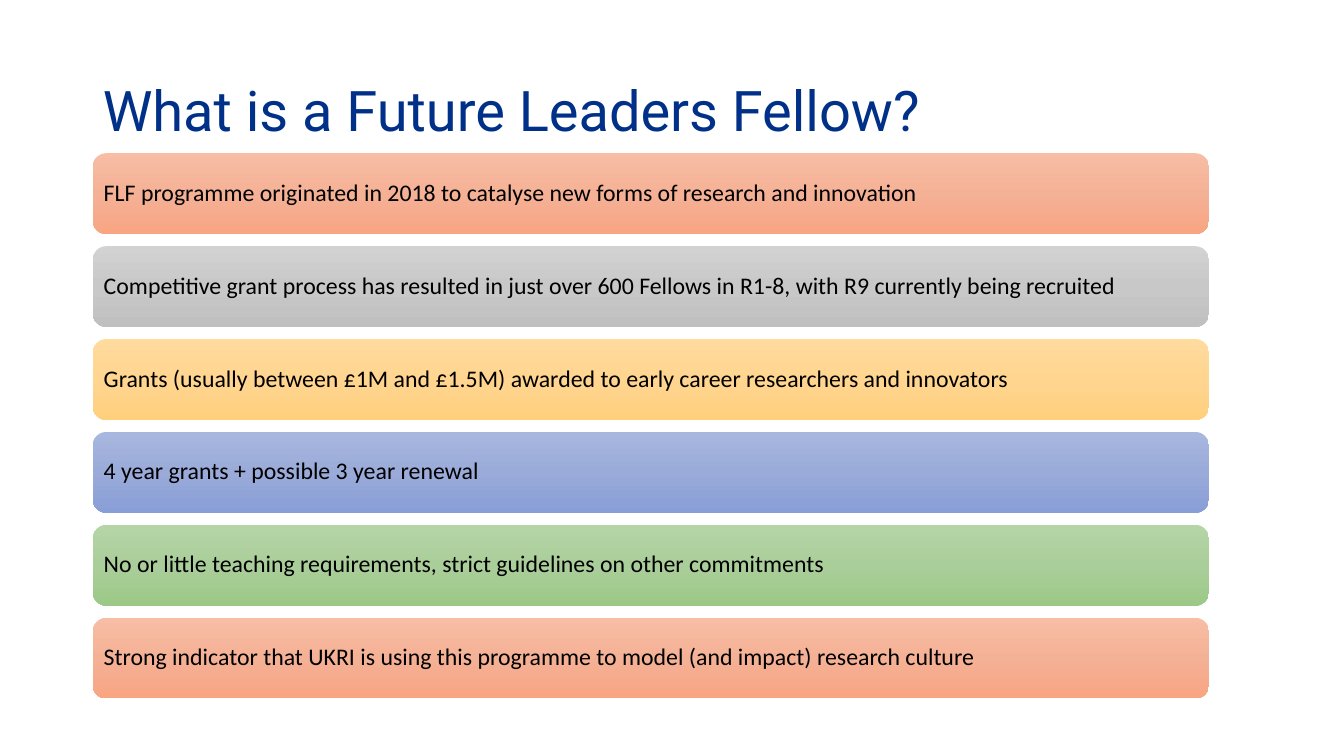
from copy import deepcopy
from dataclasses import dataclass
from typing import Any

from pptx import Presentation
from pptx.dml.color import RGBColor
from pptx.enum.shapes import MSO_SHAPE
from pptx.enum.text import MSO_ANCHOR, MSO_AUTO_SIZE, PP_ALIGN
from pptx.slide import Slide
from pptx.text.text import TextFrame
from pptx.util import Inches, Pt

SLIDE_WIDTH, SLIDE_HEIGHT = Inches(13.33), Inches(7.5)
NAVY = RGBColor(0x00, 0x30, 0x88)
BLACK = RGBColor(0x00, 0x00, 0x00)
ORANGE = (RGBColor(0xF7, 0xBD, 0xA5), RGBColor(0xF5, 0xB1, 0x96), RGBColor(0xF8, 0xA5, 0x82))
GREY = (RGBColor(0xD2, 0xD2, 0xD2), RGBColor(0xC8, 0xC8, 0xC8), RGBColor(0xC0, 0xC0, 0xC0))
GOLD = (RGBColor(0xFF, 0xDB, 0x9E), RGBColor(0xFF, 0xD5, 0x90), RGBColor(0xFF, 0xD0, 0x7C))
BLUE = (RGBColor(0xA8, 0xB7, 0xDF), RGBColor(0x9A, 0xAB, 0xD9), RGBColor(0x88, 0x9E, 0xD7))
GREEN = (RGBColor(0xB5, 0xD5, 0xA7), RGBColor(0xAA, 0xCE, 0x9A), RGBColor(0x9C, 0xC9, 0x87))

LEFT_SHARE, BAR_WIDTH_SHARE, TITLE_WIDTH_SHARE = 6.9, 83.05, 82.07
TITLE_TOP_SHARE, TITLE_HEIGHT_SHARE = 5.33, 19.33
FIRST_BAR_SHARE, BAR_HEIGHT_SHARE, BAR_STEP_SHARE = 20.27, 10.67, 12.29

FRAME_FORMAT = {
    "word_wrap": True,
    "auto_size": MSO_AUTO_SIZE.NONE,
    "vertical_anchor": MSO_ANCHOR.MIDDLE,
}
BAR_FRAME_FORMAT = FRAME_FORMAT | dict.fromkeys(
    ("margin_left", "margin_top", "margin_right", "margin_bottom"), Inches(0.07)
)
PARAGRAPH_FORMAT = {"alignment": PP_ALIGN.LEFT, "line_spacing": 0.9}
TITLE_FONT = {"name": "Roboto", "size": Pt(40)}
BAR_FONT = {"name": "Calibri", "size": Pt(17)}


@dataclass(frozen=True)
class Bar:
    """A statement and the gradient behind it."""

    text: str
    colours: tuple[RGBColor, RGBColor, RGBColor]


BARS = (
    Bar("FLF programme originated in 2018 to catalyse new forms of research and innovation", ORANGE),
    Bar("Competitive grant process has resulted in just over 600 Fellows in R1-8, "
        "with R9 currently being recruited", GREY),
    Bar("Grants (usually between £1M and £1.5M) awarded to early career researchers and innovators", GOLD),
    Bar("4 year grants + possible 3 year renewal", BLUE),
    Bar("No or little teaching requirements, strict guidelines on other commitments", GREEN),
    Bar("Strong indicator that UKRI is using this programme to model (and impact) research culture", ORANGE),
)


def across(percent: float) -> int:
    """Return a share of the slide's width."""
    return round(SLIDE_WIDTH * percent / 100)


def down(percent: float) -> int:
    """Return a share of the slide's height."""
    return round(SLIDE_HEIGHT * percent / 100)


def apply_format(target: Any, values: dict[str, Any]) -> None:
    """Set every listed attribute on the target."""
    for name, value in values.items():
        setattr(target, name, value)


def write_text(frame: TextFrame, text: str, frame_format: dict[str, Any],
               font: dict[str, Any], colour: RGBColor) -> None:
    """Fill a text frame with one formatted paragraph."""
    apply_format(frame, frame_format)
    para = frame.paragraphs[0]
    apply_format(para, PARAGRAPH_FORMAT)
    span = para.add_run()
    span.text = text
    apply_format(span.font, font)
    span.font.color.rgb = colour


def add_title(page: Slide, text: str) -> None:
    """Place and fill the title."""
    title = page.shapes.title
    apply_format(title, {
        "left": across(LEFT_SHARE),
        "top": down(TITLE_TOP_SHARE),
        "width": across(TITLE_WIDTH_SHARE),
        "height": down(TITLE_HEIGHT_SHARE),
    })
    write_text(title.text_frame, text, FRAME_FORMAT, TITLE_FONT, NAVY)


def add_bar(page: Slide, bar: Bar, row: int) -> None:
    """Draw one rounded gradient bar with its statement."""
    box = page.shapes.add_shape(
        MSO_SHAPE.ROUNDED_RECTANGLE,
        across(LEFT_SHARE),
        down(FIRST_BAR_SHARE + row * BAR_STEP_SHARE),
        across(BAR_WIDTH_SHARE),
        down(BAR_HEIGHT_SHARE),
    )
    box.shadow.inherit = False
    box.line.fill.background()
    box.fill.gradient()
    box.fill.gradient_angle = 270
    stop_list = box.element.xpath(".//a:gsLst")[0]
    stop_list.insert(1, deepcopy(stop_list[0]))
    for index, (stop, colour) in enumerate(zip(box.fill.gradient_stops, bar.colours)):
        stop.position = index / 2
        stop.color.rgb = colour
    write_text(box.text_frame, bar.text, BAR_FRAME_FORMAT, BAR_FONT, BLACK)


def main() -> None:
    """Build and save the deck."""
    deck = Presentation()
    apply_format(deck, {"slide_width": SLIDE_WIDTH, "slide_height": SLIDE_HEIGHT})
    page = deck.slides.add_slide(deck.slide_layouts.get_by_name("Title Only"))
    add_title(page, "What is a Future Leaders Fellow?")
    for row, bar in enumerate(BARS):
        add_bar(page, bar, row)
    deck.save("out.pptx")


if __name__ == "__main__":
    main()
